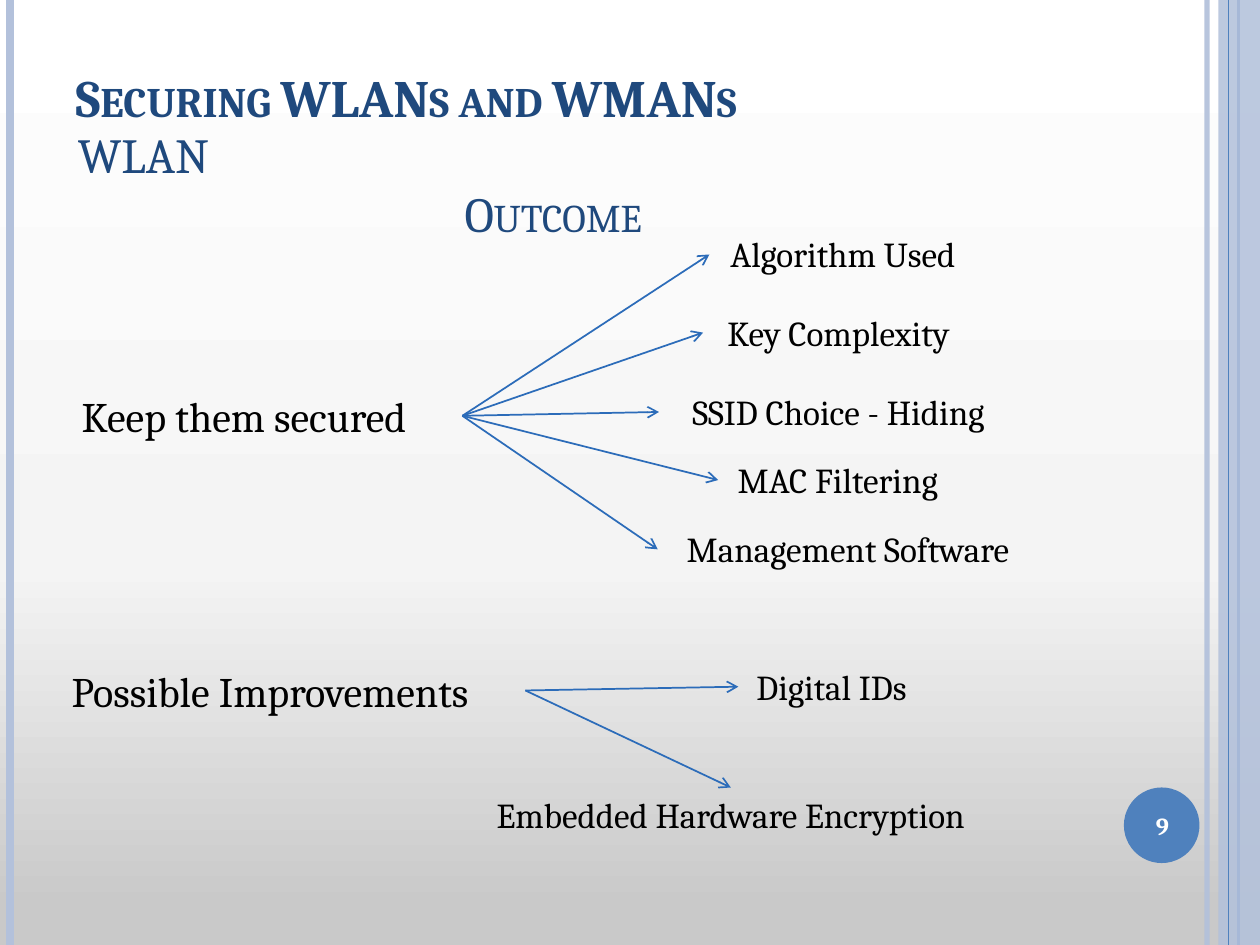
from lxml import etree
from pptx import Presentation
from pptx.dml.color import RGBColor
from pptx.enum import shapes, text
from pptx.oxml import parse_xml
from pptx.oxml.ns import qn, nsdecls
from pptx.util import Inches, Pt

NAVY = RGBColor(0x1F, 0x49, 0x7D)
BLUE = RGBColor(0x4F, 0x81, 0xBD)
PALE = RGBColor(0xB3, 0xC1, 0xDB)
ARROW = RGBColor(0x2C, 0x6C, 0xB9)
BLACK = RGBColor(0, 0, 0)
WHITE = RGBColor(255, 255, 255)
STOPS = ((4, "C9C9C9"), (40, "F4F4F4"), (100, "FFFFFF"))
WIDTH, HEIGHT = 10, 7.5
LABEL = 0.44  # height of an outcome label


def fade(part, percent):
    """Make the solid colour inside part partly transparent."""
    color = next(part.iter(qn("a:srgbClr")))
    etree.SubElement(color, qn("a:alpha"), val=str(percent * 1000))


def style(frame, words, size, color, align=text.PP_ALIGN.LEFT, bold=False, caps=False):
    para = frame.paragraphs[0]
    para.alignment = align
    run = para.add_run()
    run.text = words
    look = {"name": "Cambria", "size": Pt(size), "bold": bold}
    for key, value in look.items():
        setattr(run.font, key, value)
    run.font.color.rgb = color
    if caps:
        run.font._element.set("cap", "small")


def label(slide, box, words, size, color, **look):
    """Place one line of text that does not wrap."""
    frame = slide.shapes.add_textbox(*map(Inches, box)).text_frame
    frame.word_wrap = False
    frame.auto_size = text.MSO_AUTO_SIZE.SHAPE_TO_FIT_TEXT
    style(frame, words, size, color, **look)


def line(slide, start, end, color, width):
    link = slide.shapes.add_connector(
        shapes.MSO_CONNECTOR.STRAIGHT, *map(Inches, start + end))
    link.line.color.rgb = color
    link.line.width = Pt(width)
    etree.SubElement(link._element.spPr, qn("a:effectLst"))
    return link


def solid(slide, kind, box, color):
    shape = slide.shapes.add_shape(kind, *map(Inches, box))
    shape.shadow.inherit = False
    shape.fill.solid()
    shape.fill.fore_color.rgb = color
    shape.line.fill.background()
    return shape


def backdrop(slide):
    stops = "".join(
        f'<a:gs pos="{pos * 1000}"><a:srgbClr val="{color}"/></a:gs>'
        for pos, color in STOPS)
    slide.element.cSld.insert(0, parse_xml(
        f'<p:bg {nsdecls("p", "a")}><p:bgPr><a:gradFill rotWithShape="1">'
        f'<a:gsLst>{stops}</a:gsLst><a:lin ang="16200000" scaled="0"/>'
        '</a:gradFill><a:effectLst/></p:bgPr></p:bg>'))


def stripes(slide):
    def rule(x, color, width):
        return line(slide, (x, 0), (x, HEIGHT), color, width)

    fade(rule(9.58, PALE, 3).line._ln, 93)
    rule(0.08, PALE, 4.5)
    rule(9.83, BLUE, 1.5)
    band = solid(slide, shapes.MSO_SHAPE.RECTANGLE,
                 (9.67, 0, WIDTH - 9.67, HEIGHT), PALE)
    fade(band._element.spPr, 87)
    rule(9.75, BLUE, 0.75)


def badge(slide, left, top, size, number):
    solid(slide, shapes.MSO_SHAPE.OVAL, (left, top, size, size), BLUE)
    box = (left - 0.03, top + 0.02, size + 0.07, size - 0.03)
    frame = slide.shapes.add_textbox(*map(Inches, box)).text_frame
    frame.word_wrap = True
    frame.vertical_anchor = text.MSO_ANCHOR.MIDDLE
    style(frame, number, 14, WHITE, align=text.PP_ALIGN.CENTER, bold=True)


def heading(slide, left, top, width, height):
    title = slide.shapes.title
    place = {"left": left, "top": top, "width": width, "height": height}
    for key, value in place.items():
        setattr(title, key, Inches(value))
    title.text_frame.vertical_anchor = text.MSO_ANCHOR.BOTTOM
    style(title.text_frame, "Securing WLANs and WMANs", 30, NAVY, bold=True, caps=True)
    subs = (("WLAN", 0.02, 0.59, 1.34), ("Outcome", 3.09, 1.06, 1.87))
    for words, x, y, wide in subs:
        label(slide, (left + x, top + y, wide, 0.57), words, 28, NAVY, caps=True)


def fan(slide, left, top, width, topic, items):
    """Draw a topic with an arrow to each item: words, left, top, width, tip."""
    label(slide, (left, top, width, 0.5), topic, 24, BLACK)
    start = (left + width, top + 0.25)
    for words, x, y, wide, tip in items:
        label(slide, (x, y, wide, LABEL), words, 20, BLACK,
              align=text.PP_ALIGN.CENTER)
        end = (x, y + LABEL / 2) if tip == "side" else (x + wide / 2, y)
        link = line(slide, start, end, ARROW, 1)
        etree.SubElement(link.line._ln, qn("a:tailEnd"), type="arrow")


def main():
    deck = Presentation()
    deck.slide_width, deck.slide_height = Inches(WIDTH), Inches(HEIGHT)
    slide = deck.slides.add_slide(deck.slide_layouts[5])
    backdrop(slide)
    stripes(slide)
    badge(slide, 8.92, 6.25, 0.6, "9")
    heading(slide, 0.5, 0.35, 8.17, 0.72)
    fan(slide, 0.55, 3.05, 3.12, "Keep them secured", (
        ("Algorithm Used", 5.63, 1.8, 2.12, "side"),
        ("Key Complexity", 5.58, 2.42, 2.15, "side"),
        ("SSID Choice - Hiding", 5.23, 3.05, 2.85, "side"),
        ("MAC Filtering", 5.7, 3.59, 1.9, "side"),
        ("Management Software", 5.22, 4.14, 3.02, "side")))
    fan(slide, 0.47, 5.23, 3.7, "Possible Improvements", (
        ("Digital IDs", 5.86, 5.23, 1.48, "side"),
        ("Embedded Hardware Encryption", 3.67, 6.25, 4.26, "top")))
    deck.save("out.pptx")


if __name__ == "__main__":
    main()
